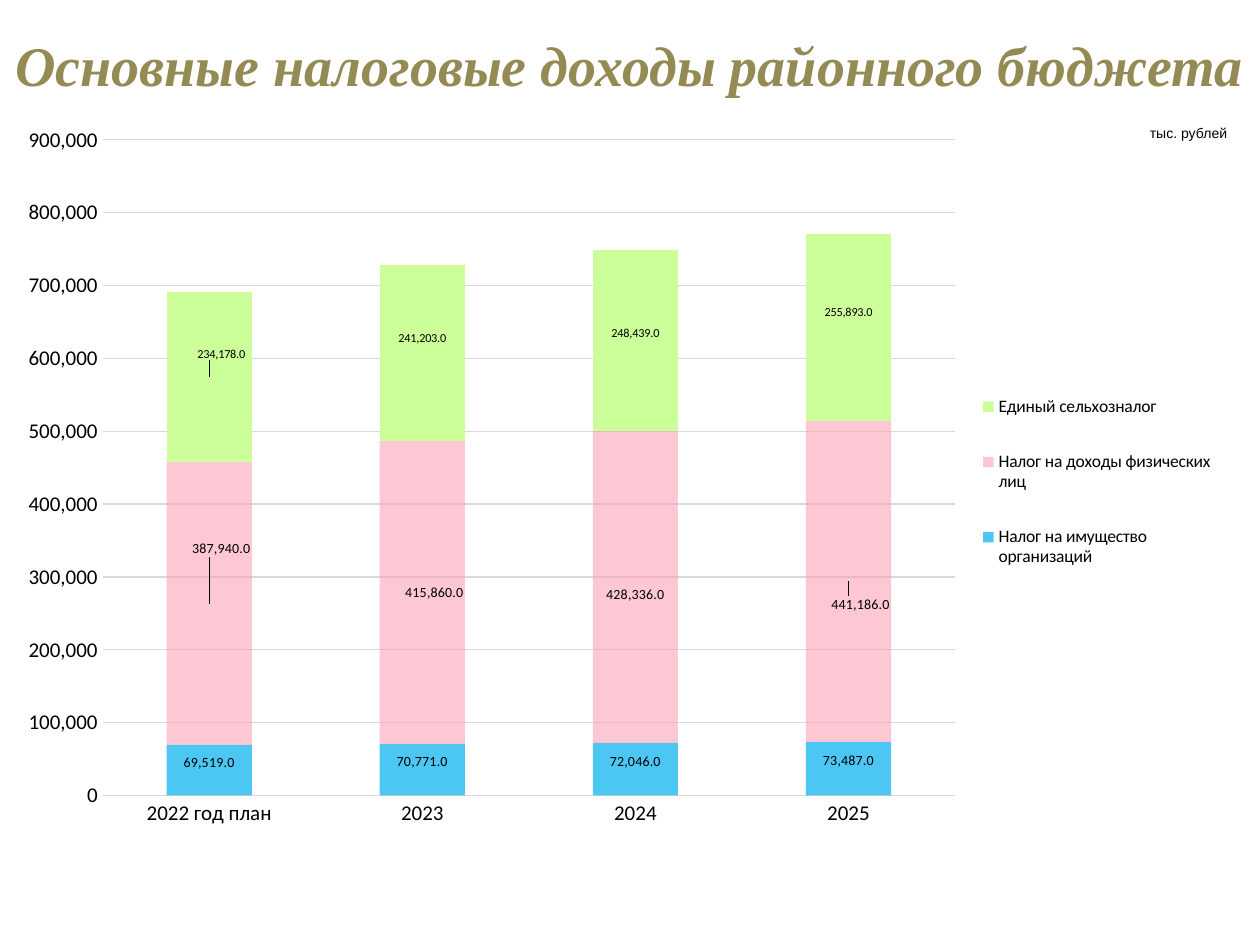
from lxml import etree
from pptx import Presentation
from pptx.chart.data import CategoryChartData
from pptx.dml.color import RGBColor
from pptx.enum import chart as ch, text
from pptx.oxml import parse_xml
from pptx.oxml.ns import nsdecls, qn
from pptx.util import Inches, Pt

YEARS = ["2022 год план", "2023", "2024", "2025"]
LABEL_FORMAT = "#,##0.0"
# name, values, fill, opacity %, label size, label shifts as shares of the chart
TAXES = [
    ("Налог на имущество организаций", [69519, 70771, 72046, 73487], "00B0F0", 70, 8,
     [(0, -0.01), (0, -0.01), (0, -0.01), (0, -0.01)]),
    ("Налог на доходы физических лиц", [387940, 415860, 428336, 441186], "FD9DB4", 56, 8,
     [(0.01, -0.07), (0.01, 0), (0, 0.01), (0.01, 0.03)]),
    ("Единый сельхозналог", [234178, 241203, 248439, 255893], "CCFF99", 100, 7,
     [(0.01, -0.03), (0, -0.02), (0, -0.01), (0, -0.02)]),
]


def color(value):
    return RGBColor.from_string(value)


def set_font(font, size, name="Calibri", fill="000000"):
    font.size, font.name = Pt(size), name
    font.color.rgb = color(fill)


def add_text(s, box, words, size, name, fill, align, wrap=True):
    tf = s.shapes.add_textbox(*map(Inches, box)).text_frame
    tf.word_wrap = wrap
    p = tf.paragraphs[0]
    p.text, p.alignment = words, align
    set_font(p.font, size, name, fill)
    return tf


def layout(x, y, w=None, h=None, target=None):
    """Manual layout; without a size it is a shift from the default place."""
    parts = [("layoutTarget", target)] if target else []
    if w is not None:
        parts += [("xMode", "edge"), ("yMode", "edge")]
    parts += [("x", x), ("y", y)]
    if w is not None:
        parts += [("w", w), ("h", h)]
    inner = "".join(f'<c:{tag} val="{val}"/>' for tag, val in parts)
    return parse_xml(f'<c:layout {nsdecls("c")}><c:manualLayout>{inner}'
                     '</c:manualLayout></c:layout>')


def place(element, new, after=None):
    """Give a chart part its layout, replacing any it has."""
    for old in element.findall(qn("c:layout")):
        element.remove(old)
    if after is None:
        element.insert(0, new)
    else:
        element.find(qn(after)).addnext(new)


def style_series(series, fill, opacity, size, shifts):
    series.format.fill.solid()
    series.format.fill.fore_color.rgb = color(fill)
    if opacity < 100:
        clr = series.format.fill._xPr.find(".//" + qn("a:srgbClr"))
        etree.SubElement(clr, qn("a:alpha")).set("val", str(opacity * 1000))
    labels = series.data_labels
    labels.show_value = True
    labels.number_format, labels.number_format_is_linked = LABEL_FORMAT, False
    set_font(labels.font, size)
    for i, shift in enumerate(shifts):
        label = series.points[i].data_label
        label.position = ch.XL_LABEL_POSITION.CENTER
        set_font(label.font, size)
        dlbl = labels._element.findall(qn("c:dLbl"))[i]
        place(dlbl, layout(*shift), "c:idx")
        dlbl.find(qn("c:layout")).addnext(parse_xml(
            f'<c:numFmt {nsdecls("c")} formatCode="{LABEL_FORMAT}" sourceLinked="0"/>'))


def style_axes(chart):
    cat, val = chart.category_axis, chart.value_axis
    for axis in (cat, val):
        axis.major_tick_mark = axis.minor_tick_mark = ch.XL_TICK_MARK.NONE
        set_font(axis.tick_labels.font, 12)
    cat.format.line.color.rgb = color("D9D9D9")
    cat.format.line.width = Pt(1)
    val.format.line.fill.background()
    val.minimum_scale, val.maximum_scale, val.major_unit = 0, 900000, 100000
    val.tick_labels.number_format = "#,##0"
    val.tick_labels.number_format_is_linked = False
    grid = val.major_gridlines.format.line
    grid.color.rgb, grid.width = color("D9D9D9"), Pt(0.75)


def add_tax_chart(s, box):
    data = CategoryChartData(number_format="General")
    data.categories = YEARS
    for name, values, *_ in TAXES:
        data.add_series(name, values)
    chart = s.shapes.add_chart(ch.XL_CHART_TYPE.COLUMN_STACKED,
                               *map(Inches, box), data).chart
    chart.has_title = False
    set_font(chart.font, 10)
    plot = chart.plots[0]
    plot.gap_width, plot.overlap, plot.vary_by_categories = 150, 100, False
    for series, (_, _, *style) in zip(plot.series, TAXES):
        style_series(series, *style)
    style_axes(chart)
    place(chart._chartSpace.chart.plotArea,
          layout(0.064, 0.026, 0.704, 0.842, "inner"))
    # Legend to the right of the columns
    chart.has_legend = True
    legend = chart.legend
    legend.position = ch.XL_LEGEND_POSITION.CORNER
    legend.include_in_layout = False
    set_font(legend.font, 10)
    place(legend._element, layout(0.78, 0.31, 0.21, 0.31), "c:legendPos")


def add_heading(s, box):
    tf = add_text(s, box, "Основные налоговые доходы районного бюджета", 32,
                  "Times New Roman", "948A54", text.PP_ALIGN.CENTER)
    tf.vertical_anchor = text.MSO_ANCHOR.MIDDLE
    p = tf.paragraphs[0]
    p.font.bold = p.font.italic = True
    p._p.get_or_add_pPr().set("marL", str(Inches(0.78)))


def add_unit_note(s, box):
    tf = add_text(s, box, "тыс. рублей", 8, "Arial", "000000",
                  text.PP_ALIGN.RIGHT, wrap=False)
    tf.auto_size = text.MSO_AUTO_SIZE.SHAPE_TO_FIT_TEXT


def main():
    prs = Presentation()
    prs.slide_width, prs.slide_height = Inches(10), Inches(7.5)
    s = prs.slides.add_slide(prs.slide_layouts[6])
    add_heading(s, (-0.98, 0.13, 11.18, 0.76))
    add_tax_chart(s, (0.2, 0.95, 9.61, 6.18))
    add_unit_note(s, (9.01, 0.94, 0.83, 0.24))
    prs.save("out.pptx")


if __name__ == "__main__":
    main()
